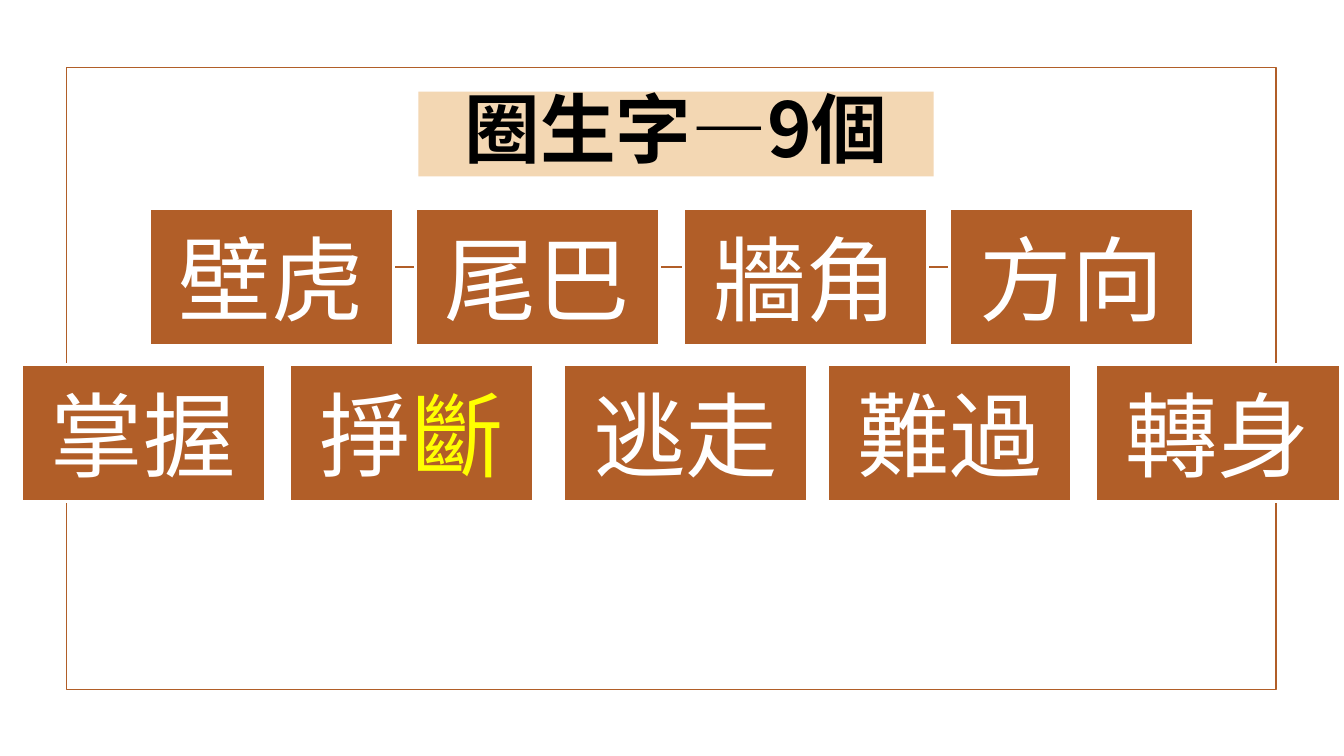
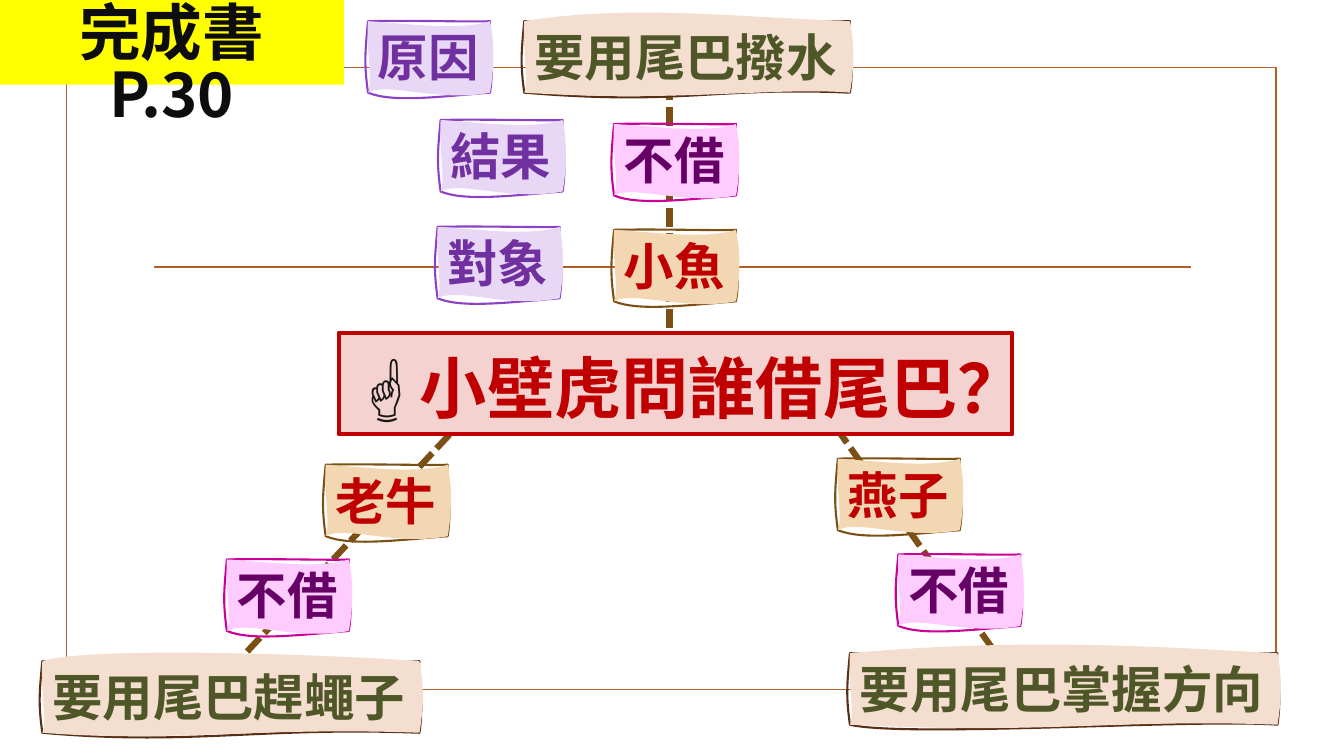
from pptx import Presentation
from pptx.dml.color import RGBColor
from pptx.enum.dml import MSO_LINE
from pptx.enum.shapes import MSO_CONNECTOR, MSO_SHAPE
from pptx.enum.text import MSO_ANCHOR, MSO_AUTO_SIZE, PP_ALIGN
from pptx.oxml import parse_xml
from pptx.oxml.ns import nsdecls, qn
from pptx.util import Inches, Pt

RECTANGLE, STRAIGHT = MSO_SHAPE.RECTANGLE, MSO_CONNECTOR.STRAIGHT
SYSTEM_DASH = MSO_LINE.SQUARE_DOT
TOP, MIDDLE = MSO_ANCHOR.TOP, MSO_ANCHOR.MIDDLE
LEFT, CENTER = PP_ALIGN.LEFT, PP_ALIGN.CENTER
FIXED, GROW = MSO_AUTO_SIZE.NONE, MSO_AUTO_SIZE.SHAPE_TO_FIT_TEXT

RUST = RGBColor(0xB1, 0x5E, 0x28)
WHITE = RGBColor(0xFF, 0xFF, 0xFF)
BLACK = RGBColor(0x00, 0x00, 0x00)
INK = RGBColor(0x0D, 0x0D, 0x0D)
CHARCOAL = RGBColor(0x16, 0x16, 0x16)
YELLOW = RGBColor(0xFF, 0xFF, 0x00)
SAND = RGBColor(0xF3, 0xD7, 0xB3)
BROWN = RGBColor(0x7C, 0x50, 0x14)
RED = RGBColor(0xC0, 0x00, 0x00)
ROSE = RGBColor(0xF4, 0xD2, 0xCF)
LILAC = RGBColor(0xE8, 0xD8, 0xF6)
VIOLET = RGBColor(0x8D, 0x42, 0xC6)
PURPLE = RGBColor(0x70, 0x30, 0xA0)
PINK = RGBColor(0xFF, 0xCC, 0xFF)
MAGENTA = RGBColor(0xCC, 0x00, 0x99)
PLUM = RGBColor(0x66, 0x00, 0x66)
PEACH = RGBColor(0xF4, 0xDE, 0xCF)
COCOA = RGBColor(0x58, 0x2F, 0x14)
OLIVE = RGBColor(0x4F, 0x57, 0x28)

CJK_FONT, SYMBOL_FONT = "Noto Sans CJK SC", "Times New Roman"
BREAK = "\v"
TITLE_SPACING = 0.85
TAG_HEIGHT, TAG_WIDTH = 0.71, 1.21

TAG_STYLES = {
    "label": (LILAC, VIOLET, PURPLE),
    "animal": (SAND, BROWN, RED),
    "answer": (PINK, MAGENTA, PLUM),
    "reason": (PEACH, COCOA, OLIVE),
}

# Each bend is (fraction of the width, inches off the edge).
SMALL_BENDS = (
    ((0.38, -0.01), (0.88, 0.01), (0.58, 0.04), (0.2, 0.1)),
    ((0.29, 0.02), (0.75, 0.1), (0.58, 0.1), (0.16, -0.11)),
)
WIDE_OFFSETS = ((0.09, 0.03, -0.06, 0.13), (-0.17, -0.04, -0.06, 0.1))
WIDE_FRACTIONS = {
    3.23: ((0.3, 0.55, 0.58, 0.49), (0.32, 0.65, 0.78, 0.47)),
    3.74: ((0.37, 0.86, 0.58, 0.39), (0.14, 0.89, 0.57, 0.33)),
    4.24: ((0.41, 0.61, 0.81, 0.13), (0.44, 0.8, 0.63, 0.46)),
}
SIDE_BENDS = (
    ((-0.02, 0.09), (0.05, 0.4), (-0.04, 0.42), (-0.03, 0.32)),
    ((0.05, 0.24), (0.04, 0.49), (0.05, 0.59), (-0.02, 0.3)),
)

WORD_ROWS = (
    (2.07, (1.48, 4.12, 6.78, 9.42), ("壁虎", "尾巴", "牆角", "方向")),
    (3.62, (0.21, 2.87, 5.59, 8.21, 10.87), ("掌握", "掙斷", "逃走", "難過", "轉身")),
)
HIGHLIGHT = "斷"

BRANCHES = (
    ((10.28, 7.05), (8.1, 3.97)),
    ((6.64, 3.5), (6.64, 0.64)),
    ((2.11, 6.83), (4.46, 4.31)),
)
TAGS = (
    ("小魚", "animal", 6.09, 2.28, TAG_WIDTH),
    ("對象", "label", 4.34, 2.25, TAG_WIDTH),
    ("原因", "label", 3.65, 0.21, TAG_WIDTH),
    ("要用尾巴撥水", "reason", 5.2, 0.21, 3.23),
    ("結果", "label", 4.37, 1.19, TAG_WIDTH),
    ("不借", "answer", 6.09, 1.23, TAG_WIDTH),
    ("老牛", "animal", 3.23, 4.61, TAG_WIDTH),
    ("不借", "answer", 2.25, 5.55, TAG_WIDTH),
    ("要用尾巴趕蠅子", "reason", 0.42, 6.56, 3.74),
    ("燕子", "animal", 8.31, 4.55, TAG_WIDTH),
    ("不借", "answer", 8.91, 5.5, TAG_WIDTH),
    ("要用尾巴掌握方向", "reason", 8.43, 6.48, 4.24),
)


def paint(shape, fill, line, width):
    """Give a shape its fill and outline, without shadow."""
    shape.shadow.inherit = False
    if fill is None:
        shape.fill.background()
    else:
        shape.fill.solid()
        shape.fill.fore_color.rgb = fill
    if line is None:
        shape.line.fill.background()
    else:
        shape.line.color.rgb = line
        shape.line.width = Pt(width)


def add_box(slide, box, fill=None, line=None, width=1.25):
    """Add a painted rectangle."""
    shape = slide.shapes.add_shape(RECTANGLE, *map(Inches, box))
    paint(shape, fill, line, width)
    return shape


def add_line(slide, start, end, color, width, dash=None):
    """Add a straight line between two points."""
    line = slide.shapes.add_connector(STRAIGHT, *map(Inches, start + end))
    line.line.color.rgb = color
    line.line.width = Pt(width)
    if dash is not None:
        line.line.dash_style = dash
    line._element.spPr.append(parse_xml(f"<a:effectLst {nsdecls('a')}/>"))


def write_text(shape, spans, align=CENTER, spacing=None, **frame_format):
    """Write one paragraph of (text, size, color, bold, font) spans."""
    frame = shape.text_frame
    for name, value in frame_format.items():
        setattr(frame, name, value)
    para = frame.paragraphs[0]
    para.alignment = align
    if spacing is not None:
        para.line_spacing = spacing
    for text, size, color, bold, font in spans:
        if text == BREAK:
            para.add_line_break()
            continue
        span = para.add_run()
        span.text = text
        for name, value in {"name": font, "size": Pt(size), "bold": bold}.items():
            setattr(span.font, name, value)
        span.font.color.rgb = color
        east_asian = parse_xml(f'<a:ea {nsdecls("a")} typeface="{font}"/>')
        span.font._element.find(qn("a:latin")).addnext(east_asian)


def add_title(slide, box, fill, lines, size, color, anchor):
    """Add a bold title on a coloured band."""
    spans = []
    for line in lines:
        if spans:
            spans.append((BREAK, size, color, True, CJK_FONT))
        spans.append((line, size, color, True, CJK_FONT))
    write_text(add_box(slide, box, fill), spans, spacing=TITLE_SPACING,
               word_wrap=True, auto_size=FIXED, vertical_anchor=anchor)


def add_slide(deck):
    """Add a blank slide with the shared frame and rule."""
    slide = deck.slides.add_slide(deck.slide_layouts[6])
    add_box(slide, (0.66, 0.67, 12, 6.17), line=RUST)
    add_line(slide, (1.53, 2.65), (11.81, 2.65), RUST, 1.25)
    return slide


def curve_xml(width, height, bends, sides, flag):
    """Return the XML of one closed, wavy outline."""
    (top_a, top_b, low_a, low_b), (right_a, right_b, left_a, left_b) = bends, sides

    def edge(bend, base):
        return bend[0] * width, base + bend[1]

    curves = (
        (edge(top_a, 0), edge(top_b, 0), (width, 0)),
        ((width + right_a[0], right_a[1]), (width + right_b[0], right_b[1]), (width, height)),
        (edge(low_a, height), edge(low_b, height), (0, height)),
        (left_a, left_b, (0, 0)),
    )
    body = "".join(
        "<a:cubicBezTo>"
        + "".join(f'<a:pt x="{int(Inches(x))}" y="{int(Inches(y))}"/>' for x, y in curve)
        + "</a:cubicBezTo>"
        for curve in curves
    )
    return (f'<a:path {nsdecls("a")} w="{Inches(width)}" h="{Inches(height)}" {flag}>'
            f'<a:moveTo><a:pt x="0" y="0"/></a:moveTo>{body}<a:close/></a:path>')


def tag_bends(width):
    """Return the outline bends and the fill bends for a tag width."""
    if width == TAG_WIDTH:
        return SMALL_BENDS
    return [tuple(zip(*pair)) for pair in zip(WIDE_FRACTIONS[width], WIDE_OFFSETS)]


def add_tag(slide, text, style, left, top, width):
    """Add a hand-drawn tag with its word."""
    fill, line, color = TAG_STYLES[style]
    builder = slide.shapes.build_freeform(0, 0, scale=Inches(1) / 100)
    right, bottom = width * 100, TAG_HEIGHT * 100
    builder.add_line_segments([(right, 0), (right, bottom), (0, bottom)])
    tag = builder.convert_to_shape(Inches(left), Inches(top))
    outlines = tag._element.spPr.find(".//" + qn("a:pathLst"))
    outlines.clear()
    flags = ('fill="none"', 'stroke="0"')
    for bends, sides, flag in zip(tag_bends(width), SIDE_BENDS, flags):
        outlines.append(parse_xml(curve_xml(width, TAG_HEIGHT, bends, sides, flag)))
    paint(tag, fill, line, 1.5)
    write_text(tag, [(text, 36, color, True, CJK_FONT)], LEFT,
               word_wrap=False, auto_size=GROW, vertical_anchor=TOP)


def add_word_card(slide, word, left, top):
    """Add one vocabulary card."""
    card = add_box(slide, (left, top, 2.42, 1.36), RUST, WHITE, 2)
    groups = word if HIGHLIGHT in word else (word,)
    spans = [(part, 66, YELLOW if part == HIGHLIGHT else WHITE, False, CJK_FONT)
             for part in groups]
    write_text(card, spans, word_wrap=True, vertical_anchor=MIDDLE)


def build_words(deck):
    """Build the slide of new words."""
    slide = add_slide(deck)
    add_title(slide, (4.15, 0.91, 5.11, 0.84), SAND, ["圈生字—9個"], 54, BLACK, MIDDLE)
    for top, lefts, words in WORD_ROWS:
        for left, word in zip(lefts, words):
            add_word_card(slide, word, left, top)


def build_story_map(deck):
    """Build the slide that maps the story."""
    slide = add_slide(deck)
    for start, end in BRANCHES:
        add_line(slide, start, end, BROWN, 4.5, SYSTEM_DASH)
    question = add_box(slide, (3.36, 3.3, 6.68, 1.01), ROSE, RED, 3)
    write_text(question, [("☝", 54, CHARCOAL, True, SYMBOL_FONT),
                          ("小壁虎問誰借尾巴？", 48, RED, True, CJK_FONT)],
               LEFT, word_wrap=False, auto_size=GROW, vertical_anchor=TOP)
    for tag in TAGS:
        add_tag(slide, *tag)
    add_title(slide, (0, 0, 3.41, 0.84), YELLOW, ["完成書", "P.30"], 44, INK, TOP)


def main():
    """Build and save the deck."""
    deck = Presentation()
    deck.slide_width, deck.slide_height = Inches(13.33), Inches(7.5)
    build_words(deck)
    build_story_map(deck)
    deck.save("out.pptx")


if __name__ == "__main__":
    main()
